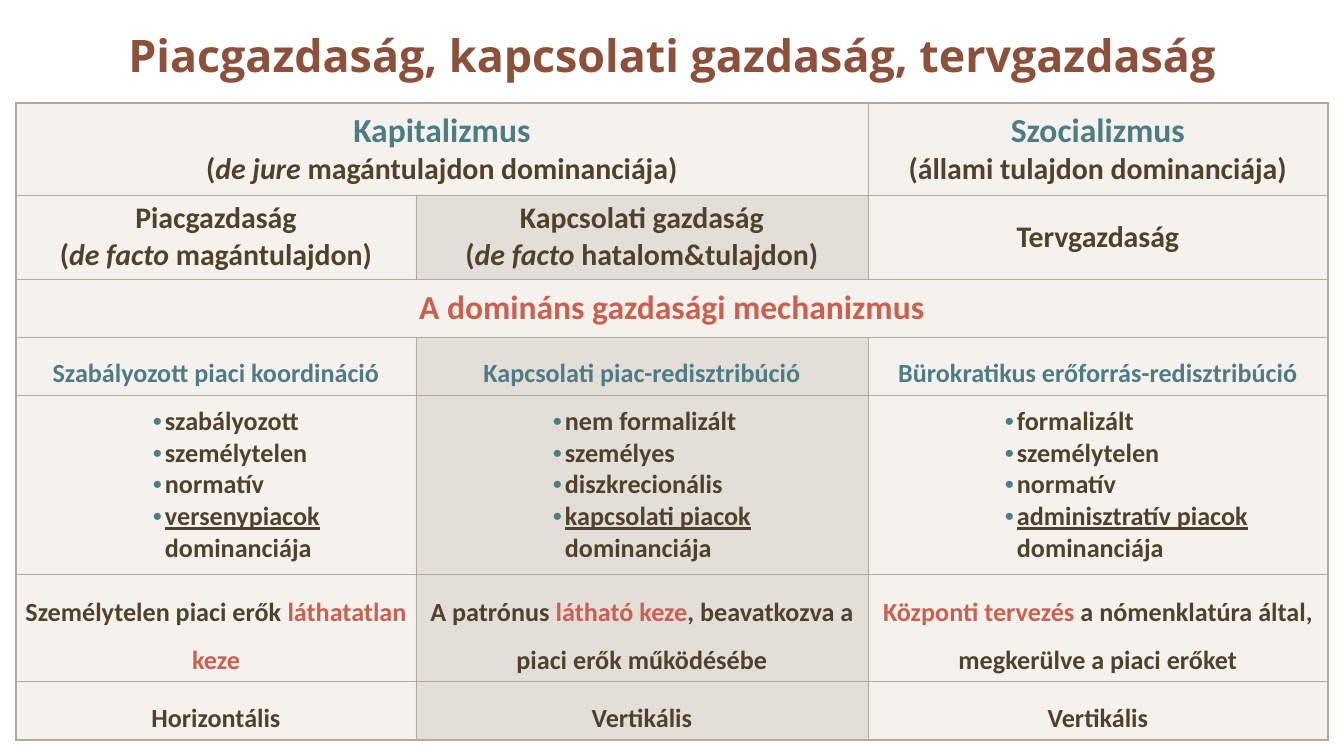
from dataclasses import dataclass

from lxml import etree
from pptx import Presentation
from pptx.dml.color import RGBColor
from pptx.enum.text import MSO_ANCHOR, PP_ALIGN
from pptx.oxml.ns import qn
from pptx.util import Emu, Pt

CENTER, LEFT = PP_ALIGN.CENTER, PP_ALIGN.LEFT
MIDDLE = MSO_ANCHOR.MIDDLE


@dataclass(frozen=True)
class Theme:
    brown: str = "8D503B"
    dark: str = "50412B"
    teal: str = "4D7C85"
    red: str = "CD5F50"
    line: str = "B3A99D"
    light: str = "EFEAE4"
    shade: str = "D1C9BE"
    alpha: int = 60
    head: str = "Open Sans"
    body: str = "Calibri"
    title: int = 24
    large: int = 18
    mid: int = 16
    small: int = 14
    outer: float = 1
    inner: float = 0.5


T = Theme()
TITLE = "Piacgazdaság, kapcsolati gazdaság, tervgazdaság"
COLS = [400, 452, 460]
ROWS = [92, 84, 58, 58, 180, 107, 58]
SHADED = 1

# A run is plain text or (text, style); a paragraph is a list of runs.
BIG = {"color": T.teal, "size": T.large}
RED = {"color": T.red}
TEAL = {"color": T.teal}
IT = {"italic": True}
UL = {"underline": True}

# Each row: (type size, line spacing, bulleted, cells); a cell is (span, paragraphs).
GRID = [
    (T.mid, 1, False, [
        (2, [[("Kapitalizmus", BIG)],
             ["(", ("de jure ", IT), "magántulajdon dominanciája)"]]),
        (1, [[("Szocializmus", BIG)], ["(állami tulajdon dominanciája)"]])]),
    (T.mid, 1, False, [
        (1, [["Piacgazdaság"], ["(", ("de facto ", IT), "magántulajdon)"]]),
        (1, [["Kapcsolati gazdaság"], ["(", ("de facto ", IT), "hatalom&tulajdon)"]]),
        (1, [["Tervgazdaság"]])]),
    (T.large, 1, False, [
        (3, [[("A domináns gazdasági mechanizmus", RED)]])]),
    (T.small, 1.5, False, [
        (1, [[("Szabályozott piaci koordináció", TEAL)]]),
        (1, [[("Kapcsolati piac-redisztribúció", TEAL)]]),
        (1, [[("Bürokratikus erőforrás-redisztribúció", TEAL)]])]),
    (T.small, 1, True, [
        (1, [["szabályozott"], ["személytelen"], ["normatív"],
             [("versenypiacok", UL), " dominanciája"]]),
        (1, [["nem formalizált"], ["személyes"], ["diszkrecionális"],
             [("kapcsolati piacok ", UL), "dominanciája"]]),
        (1, [["formalizált"], ["személytelen"], ["normatív"],
             [("adminisztratív piacok", UL), " dominanciája"]])]),
    (T.small, 1.5, False, [
        (1, [["Személytelen piaci erők ", ("láthatatlan keze", RED)]]),
        (1, [["A patrónus ", ("látható keze", RED),
              ", beavatkozva a piaci erők működésébe"]]),
        (1, [[("Központi tervezés ", RED),
              "a nómenklatúra által, megkerülve a piaci erőket"]])]),
    (T.small, 1.5, False, [
        (1, [["Horizontális"]]), (1, [["Vertikális"]]), (1, [["Vertikális"]])]),
]


def px(n):
    return Emu(round(n * 914400 / 134.4))


def style(run, size, color=T.dark, italic=False, underline=False, face=T.body):
    font = run.font
    font.name, font.size, font.bold = face, Pt(size), True
    font.italic, font.underline = italic, underline
    font.color.rgb = RGBColor.from_string(color)


def add_bullet(para):
    props = para._p.get_or_add_pPr()
    props.set("marL", str(px(144)))
    props.set("indent", str(-px(12)))
    tint = etree.SubElement(props, qn("a:buClr"))
    etree.SubElement(tint, qn("a:srgbClr"), val=T.teal)
    etree.SubElement(props, qn("a:buFont"), typeface="Arial")
    etree.SubElement(props, qn("a:buChar"), char="•")


def add_edges(cell, widths):
    props = cell._tc.get_or_add_tcPr()
    for side, width in zip("LRTB", widths):
        edge = etree.SubElement(props, qn("a:ln" + side), w=str(Pt(width)))
        fill = etree.SubElement(edge, qn("a:solidFill"))
        etree.SubElement(fill, qn("a:srgbClr"), val=T.line)


def paint(cell, color):
    cell.fill.solid()
    cell.fill.fore_color.rgb = RGBColor.from_string(color)
    tone = cell._tc.tcPr.find(".//" + qn("a:solidFill") + "[last()]")
    tone = cell._tc.tcPr.find(qn("a:solidFill")).find(qn("a:srgbClr"))
    etree.SubElement(tone, qn("a:alpha"), val=str(T.alpha * 1000))


def write(frame, paras, size, space, listed):
    for i, runs in enumerate(paras):
        para = frame.paragraphs[0] if i == 0 else frame.add_paragraph()
        para.alignment = LEFT if listed else CENTER
        para.line_spacing = float(space)
        if listed:
            add_bullet(para)
        for item in runs:
            text, look = (item, {}) if isinstance(item, str) else item
            run = para.add_run()
            run.text = text
            style(run, **{"size": size, **look})


def add_title(slide):
    frame = slide.shapes.add_textbox(px(16), px(8), px(1312), px(93)).text_frame
    frame.word_wrap = True
    frame.vertical_anchor = MIDDLE
    frame.text = TITLE
    para = frame.paragraphs[0]
    para.alignment = CENTER
    style(para.runs[0], T.title, T.brown, face=T.head)


def add_grid(slide):
    table = slide.shapes.add_table(len(ROWS), len(COLS), px(16), px(103),
                                   px(sum(COLS)), px(sum(ROWS))).table
    table.first_row = table.horz_banding = False
    for col, width in zip(table.columns, COLS):
        col.width = px(width)
    for row, height in zip(table.rows, ROWS):
        row.height = px(height)

    for r, (size, space, listed, cells) in enumerate(GRID):
        c = 0
        for span, paras in cells:
            cell, end = table.cell(r, c), c + span
            if span > 1:
                cell.merge(table.cell(r, end - 1))
            pad = px(7 if r == 0 else 5)
            cell.margin_left = cell.margin_right = pad
            cell.margin_top = cell.margin_bottom = pad
            cell.vertical_anchor = MIDDLE
            outside = (c == 0, end == len(COLS), r == 0, r == len(ROWS) - 1)
            add_edges(cell, [T.outer if out else T.inner for out in outside])
            paint(cell, T.shade if c == SHADED else T.light)
            write(cell.text_frame, paras, size, space, listed)
            c = end


def main():
    deck = Presentation()
    deck.slide_width, deck.slide_height = px(1344), px(756)
    slide = deck.slides.add_slide(deck.slide_layouts[6])
    add_title(slide)
    add_grid(slide)
    deck.save("out.pptx")


if __name__ == "__main__":
    main()
